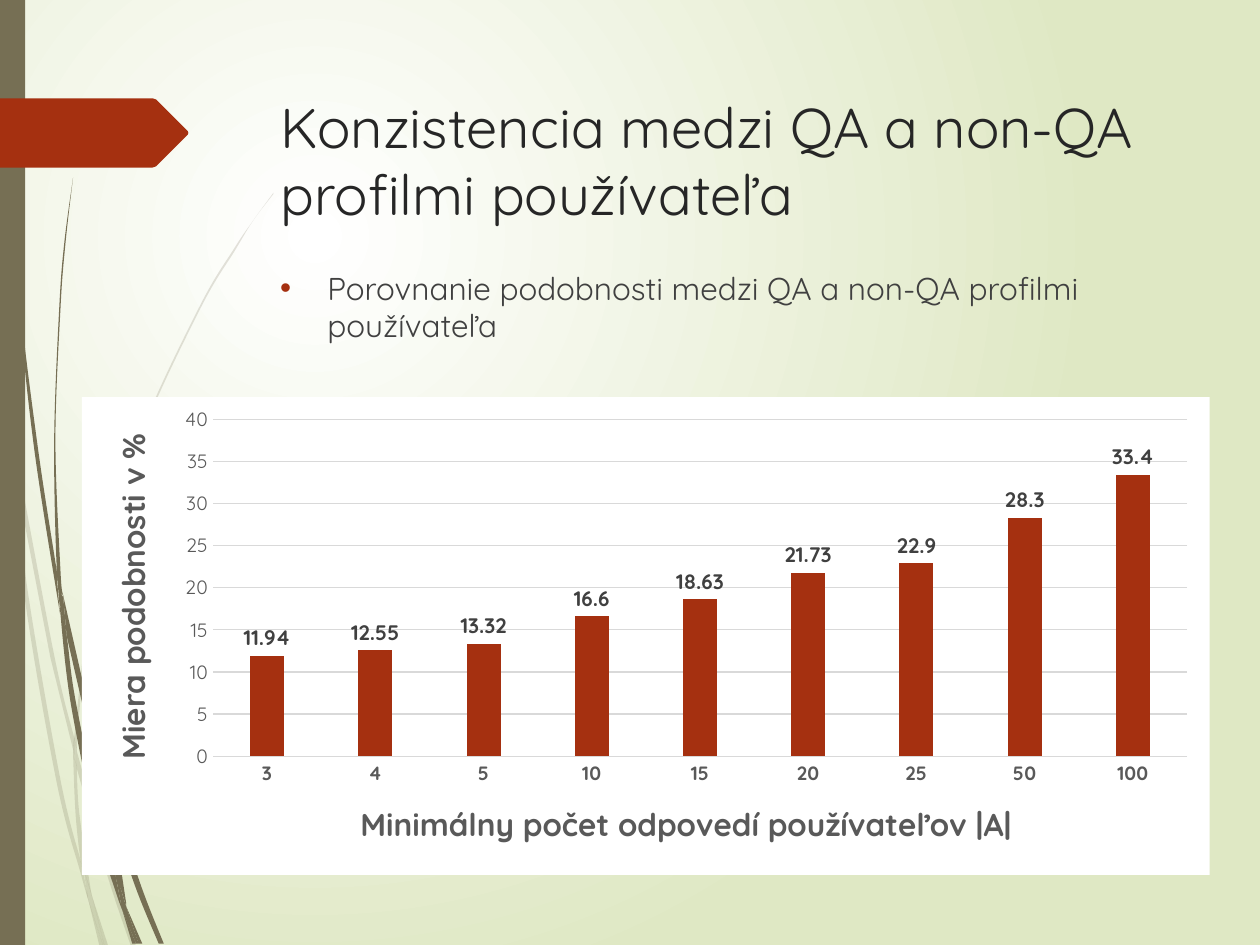
from lxml import etree
from pptx import Presentation
from pptx.chart.data import CategoryChartData
from pptx.dml.color import RGBColor
from pptx.enum.chart import XL_CHART_TYPE, XL_LABEL_POSITION, XL_TICK_MARK
from pptx.enum.shapes import MSO_SHAPE
from pptx.enum.text import MSO_ANCHOR, PP_ALIGN
from pptx.oxml import parse_xml
from pptx.oxml.ns import nsdecls, qn
from pptx.util import Pt

COLUMNS = XL_CHART_TYPE.COLUMN_CLUSTERED
OUTSIDE_END = XL_LABEL_POSITION.OUTSIDE_END
NO_TICK = XL_TICK_MARK.NONE
RECTANGLE = MSO_SHAPE.RECTANGLE
TOP = MSO_ANCHOR.TOP
LEFT = PP_ALIGN.LEFT

FONT = "Quicksand"
WHITE = RGBColor(0xFF, 0xFF, 0xFF)
PALE_GREEN = RGBColor(0xDF, 0xE8, 0xC4)
OLIVE = RGBColor(0x76, 0x6F, 0x54)
RUST = RGBColor(0xA5, 0x30, 0x10)
TITLE_INK = RGBColor(0x26, 0x26, 0x26)
BODY_INK = RGBColor(0x40, 0x40, 0x40)
AXIS_INK = RGBColor(0x59, 0x59, 0x59)
GRID_GREY = RGBColor(0xD9, 0xD9, 0xD9)

GRID = 0.72  # points per unit of the outlines below

# Each blade is a closed outline of smooth sides that meet in corners.
FADED_BLADES = [
    [[(8, 350), (6, 322), (0, 282)], [(0, 299), (7, 344), (8, 350)]],
    [[(40, 522), (59, 599)], [(59, 586), (43, 520), (10, 345)], [(12, 376), (40, 522)]],
    [[(64, 607), (61, 596)], [(61, 610), (85, 694), (104, 751)], [(108, 751), (88, 692), (64, 607)]],
    [[(83, 751), (86, 751)], [(73, 711), (83, 751)]],
    [[(64, 683), (48, 619), (22, 469), (12, 376), (8, 350)],
     [(8, 350), (19, 470), (45, 621), (64, 693), (70, 714)], [(69, 707), (64, 683)]],
    [[(58, 599), (60, 646), (64, 683), (67, 692), (73, 711)],
     [(72, 706), (63, 646), (61, 610), (61, 608), (58, 599)]],
    [[(61, 584), (76, 462), (111, 349), (159, 245), (187, 198), (201, 175), (217, 154)],
     [(217, 153), (201, 175), (186, 197), (158, 244), (110, 348), (75, 461), (59, 584), (59, 586)],
     [(61, 596), (61, 584)]],
    [[(70, 714), (79, 751)], [(82, 751), (70, 714)]],
    [[(61, 608), (61, 610), (61, 596), (59, 586)], [(58, 599), (61, 608)]],
    [[(67, 692), (65, 683)], [(69, 707), (70, 714), (82, 751)], [(83, 751), (73, 711), (67, 692)]],
]
DARK_BLADES = [
    [[(5, 110), (14, 233), (27, 355), (46, 477), (47, 481)],
     [(45, 457), (45, 453), (30, 355), (15, 232), (6, 109), (4, 48), (3, 0)], [(2, 0), (3, 48), (5, 110)]],
    [[(73, 592), (88, 645)], [(88, 633), (88, 631), (77, 590), (50, 472)], [(53, 505), (73, 592)]],
    [[(94, 649), (91, 641)], [(91, 656), (109, 708), (126, 749)], [(130, 749), (113, 706), (94, 649)]],
    [[(91, 691), (81, 657), (60, 556), (53, 505), (47, 477)],
     [(47, 477), (56, 557), (77, 659), (92, 708), (97, 722)], [(96, 717), (91, 691)]],
    [[(50, 472), (48, 453), (44, 349), (48, 245), (52, 193), (58, 141)],
     [(58, 141), (51, 193), (47, 245), (43, 349), (45, 449), (49, 472)]],
    [[(110, 749), (113, 749)], [(100, 719), (110, 749)]],
    [[(47, 477), (53, 505)], [(50, 472), (49, 472), (45, 449)], [(45, 453), (47, 477)]],
    [[(91, 633), (103, 552), (131, 476), (169, 406), (191, 374), (203, 359), (216, 344)],
     [(215, 344), (203, 358), (191, 373), (168, 405), (129, 474), (101, 551), (88, 631)],
     [(91, 641), (91, 633)]],
    [[(97, 722), (105, 749)], [(108, 749), (97, 722)]],
    [[(88, 645), (91, 691), (96, 706), (100, 719)], [(100, 716), (91, 656), (90, 651), (88, 645)]],
    [[(88, 645), (90, 651), (91, 656), (91, 641)], [(88, 631), (88, 633), (88, 645)]],
    [[(96, 706), (91, 691)], [(96, 717), (97, 722), (108, 749)], [(110, 749), (100, 719), (96, 706)]],
]
TAG_OUTLINE = [(0, 78), (121, 78), (124, 79), (149, 104), (149.5, 105.5),
               (149, 107), (124, 132), (121, 133), (0, 133)]

CATEGORIES = ["3", "4", "5", "10", "15", "20", "25", "50", "100"]
SIMILARITIES = [11.94, 12.55, 13.32, 16.6, 18.63, 21.73, 22.9, 28.3, 33.4]


def trace(sides):
    """Return the corner points and, for each step between them, its Bezier handles or None."""
    points, handles = [], []
    for side in sides:
        if not points:
            points.append(side[0])
        elif points[-1] != side[0]:
            points.append(side[0])
            handles.append(None)
        padded = [side[0], *side, side[-1]]
        for a, b, c, d in zip(padded, padded[1:], padded[2:], padded[3:]):
            points.append(c)
            handles.append((tuple(q + (r - p) / 6 for p, q, r in zip(a, b, c)),
                            tuple(r - (s - q) / 6 for q, r, s in zip(b, c, d))))
    return points, handles


def paint(shape, color, opacity=100):
    shape.shadow.inherit = False
    shape.fill.solid()
    shape.fill.fore_color.rgb = color
    shape.line.fill.background()
    if opacity < 100:
        srgb = shape.element.spPr.find(qn("a:solidFill")).find(qn("a:srgbClr"))
        etree.SubElement(srgb, qn("a:alpha"), val=str(opacity * 1000))


def add_outline(slide, points, color, opacity=100):
    start, *rest = [(Pt(x * GRID), Pt(y * GRID)) for x, y in points]
    builder = slide.shapes.build_freeform(*start, scale=1.0)
    builder.add_line_segments(rest, close=True)
    outline = builder.convert_to_shape()
    paint(outline, color, opacity)
    return outline


def add_blade(slide, sides, opacity):
    points, handles = trace(sides)
    blade = add_outline(slide, points, OLIVE, opacity)
    steps = blade.element.findall(".//" + qn("a:lnTo"))
    for step, pair in zip(steps, handles):
        if pair is None:
            continue
        step.tag = qn("a:cubicBezTo")
        for position, (x, y) in enumerate(pair):
            step.insert(position, etree.Element(
                qn("a:pt"), x=str(Pt(x * GRID) - blade.left), y=str(Pt(y * GRID) - blade.top)))


def set_background(slide):
    fill = slide.background.fill
    fill.gradient()
    for stop, color in zip(fill.gradient_stops, (WHITE, PALE_GREEN)):
        stop.color.rgb = color
    gradient = slide.element.find(".//" + qn("a:gradFill"))
    gradient.replace(gradient.find(qn("a:lin")), parse_xml(
        f'<a:path {nsdecls("a")} path="circle">'
        '<a:fillToRect l="50000" t="50000" r="100000" b="100000"/></a:path>'))


def add_decoration(slide, height):
    for blades, opacity in ((FADED_BLADES, 20), (DARK_BLADES, 100)):
        for sides in blades:
            add_blade(slide, sides, opacity)
    paint(slide.shapes.add_shape(RECTANGLE, 0, 0, Pt(14.4), height), OLIVE)
    add_outline(slide, TAG_OUTLINE, RUST)


def style_font(font, size, color, bold=False):
    font.name, font.size, font.bold = FONT, Pt(size), bold
    font.color.rgb = color


def add_text(slide, box, text, size, color):
    frame = slide.shapes.add_textbox(*box).text_frame
    frame.word_wrap = True
    frame.vertical_anchor = TOP
    paragraph = frame.paragraphs[0]
    paragraph.text = text
    paragraph.alignment = LEFT
    style_font(paragraph.runs[0].font, size, color)
    return paragraph


def add_bullet(paragraph):
    paragraph.space_before = Pt(10)
    properties = paragraph._p.get_or_add_pPr()
    properties.set("marL", str(Pt(27)))
    properties.set("indent", str(-Pt(27)))
    bullet_color = etree.SubElement(properties, qn("a:buClr"))
    etree.SubElement(bullet_color, qn("a:srgbClr"), val=str(RUST))
    etree.SubElement(properties, qn("a:buFont"), typeface="Arial")
    etree.SubElement(properties, qn("a:buChar"), char="•")


def style_axis(axis, title, bold):
    axis.has_title = True
    axis.axis_title.text_frame.text = title
    style_font(axis.axis_title.text_frame.paragraphs[0].runs[0].font, 18, AXIS_INK, True)
    axis.major_tick_mark = axis.minor_tick_mark = NO_TICK
    style_font(axis.tick_labels.font, 11, AXIS_INK, bold)


def style_grey_line(line):
    line.color.rgb = GRID_GREY
    line.width = Pt(0.75)


def add_similarity_chart(slide, box):
    data = CategoryChartData()
    data.categories = CATEGORIES
    data.add_series("Series 1", SIMILARITIES)
    chart = slide.shapes.add_chart(COLUMNS, *box, data).chart
    chart.has_legend = chart.has_title = False
    chart.font.name, chart.font.size = FONT, Pt(10)
    chart._chartSpace.find(qn("c:chart")).addnext(parse_xml(
        f'<c:spPr {nsdecls("c", "a")}><a:solidFill><a:srgbClr val="{WHITE}"/></a:solidFill>'
        '<a:ln><a:noFill/></a:ln></c:spPr>'))

    style_axis(chart.category_axis, "Minimálny počet odpovedí používateľov |A|", True)
    style_grey_line(chart.category_axis.format.line)
    values = chart.value_axis
    style_axis(values, "Miera podobnosti v %", False)
    values.minimum_scale, values.maximum_scale, values.major_unit = 0, 40, 5
    values.format.line.fill.background()
    style_grey_line(values.major_gridlines.format.line)

    plot = chart.plots[0]
    plot.gap_width, plot.overlap, plot.vary_by_categories = 219, -27, False
    bars = plot.series[0]
    bars.format.fill.solid()
    bars.format.fill.fore_color.rgb = RUST
    labels = bars.data_labels
    labels.show_value = True
    labels.position = OUTSIDE_END
    style_font(labels.font, 12, BODY_INK, True)


def main():
    deck = Presentation()
    deck.slide_width, deck.slide_height = Pt(720), Pt(540)
    slide = deck.slides.add_slide(deck.slide_layouts[6])
    set_background(slide)
    add_decoration(slide, deck.slide_height)
    add_text(slide, (Pt(153.3), Pt(49.2), Pt(519), Pt(100.8)),
             "Konzistencia medzi QA a non-QA profilmi používateľa", 32, TITLE_INK)
    add_bullet(add_text(slide, (Pt(153), Pt(150), Pt(519), Pt(297.4)),
                        "Porovnanie podobnosti medzi QA a non-QA profilmi používateľa", 18, BODY_INK))
    add_similarity_chart(slide, (Pt(46.8), Pt(227), Pt(644.4), Pt(273)))
    deck.save("out.pptx")


if __name__ == "__main__":
    main()
